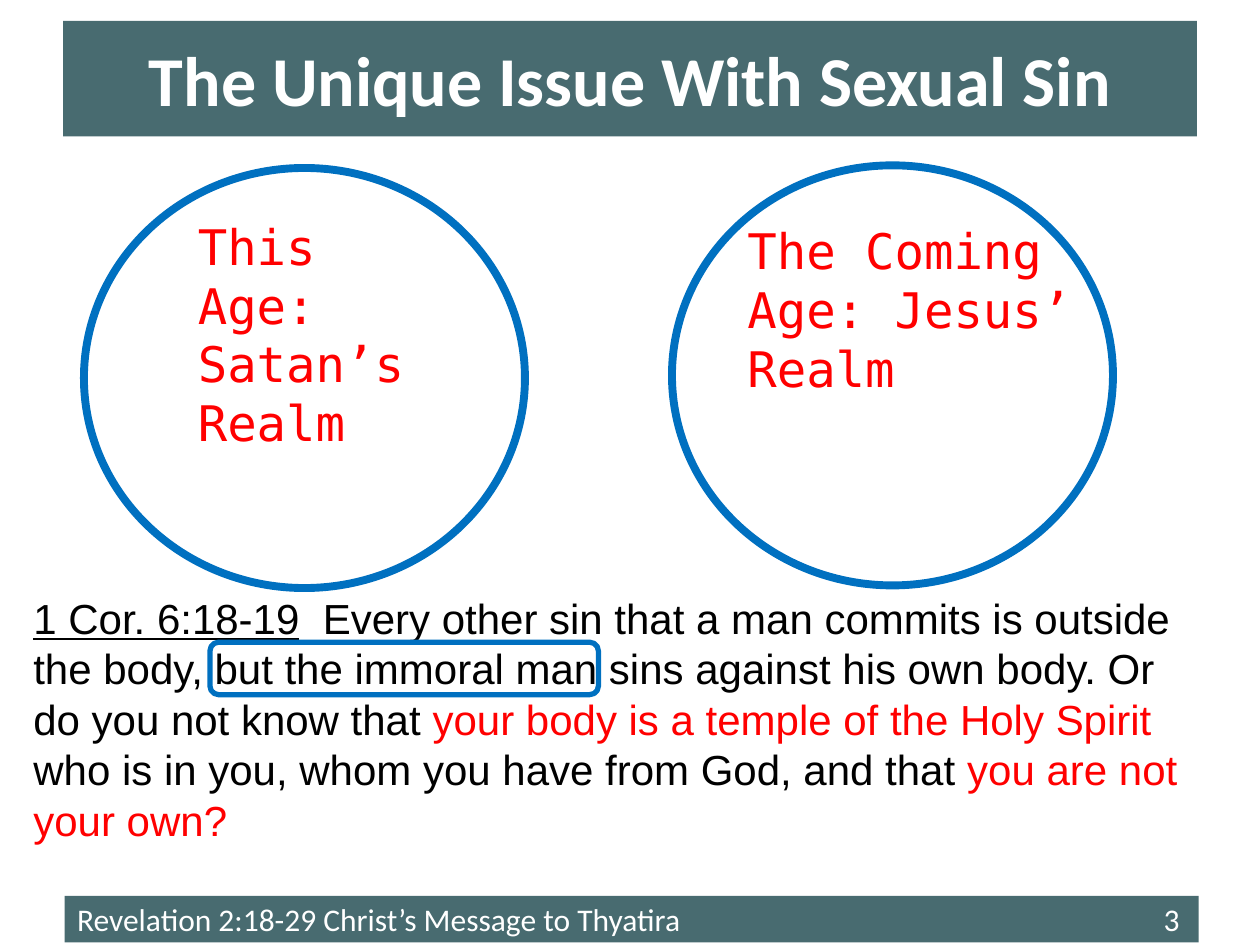
from lxml.etree import SubElement
from pptx import Presentation
from pptx.dml.color import RGBColor
from pptx.enum.shapes import MSO_SHAPE as Shape
from pptx.enum.text import MSO_ANCHOR as Anchor, PP_ALIGN as Align
from pptx.oxml.ns import qn
from pptx.util import Pt

COLORS = {
    "band": "486B70",
    "outline": "0070C0",
    "accent": "FF0000",
    "text": "000000",
    "light": "FFFFFF",
}


def color(name):
    return RGBColor.from_string(COLORS[name])


def points(*lengths):
    return [Pt(length) for length in lengths]


def format_font(font, name, size, color_name, bold=False):
    font.name = name
    font.size = Pt(size)
    font.bold = bold
    font.color.rgb = color(color_name)


def fill_band(shape):
    shape.fill.solid()
    shape.fill.fore_color.rgb = color("band")


def add_title(slide, text):
    title = slide.shapes.title
    title.left, title.top, title.width, title.height = points(36, 12, 648, 66)
    fill_band(title)
    frame = title.text_frame
    frame.text = text
    frame.vertical_anchor = Anchor.MIDDLE
    paragraph = frame.paragraphs[0]
    paragraph.alignment = Align.CENTER
    format_font(paragraph.font, "Calibri", 40, "light", bold=True)


def add_footer(slide, text, number):
    """Add the bottom band, with the slide number at a right tab stop."""
    band = slide.shapes.add_shape(Shape.RECTANGLE, *points(37, 512, 648, 26.5))
    band.shadow.inherit = False
    fill_band(band)
    band.line.fill.background()
    frame = band.text_frame
    frame.text = f"{text}\t {number}"
    frame.vertical_anchor = Anchor.MIDDLE
    paragraph = frame.paragraphs[0]
    paragraph.alignment = Align.LEFT
    format_font(paragraph.font, "Calibri", 18, "light")
    properties = paragraph._p.get_or_add_pPr()
    tabs = SubElement(properties, qn("a:tabLst"))
    SubElement(tabs, qn("a:tab"), pos=str(Pt(630)), algn="r")
    properties.insert(0, tabs)


def add_outline(slide, preset, left, top, width, height, weight):
    shape = slide.shapes.add_shape(preset, *points(left, top, width, height))
    shape.shadow.inherit = False
    shape.fill.background()
    shape.line.color.rgb = color("outline")
    shape.line.width = Pt(weight)


def add_text_box(slide, left, top, width, height):
    """Add a wrapping text box and return its first paragraph."""
    box = slide.shapes.add_textbox(*points(left, top, width, height))
    box.text_frame.word_wrap = True
    return box.text_frame.paragraphs[0]


def add_realm_label(slide, text, left, top, width):
    paragraph = add_text_box(slide, left, top, width, 109)
    paragraph.text = text
    format_font(paragraph.font, "DejaVu Sans Mono", 28, "accent")


def add_verse(slide, reference, passages):
    paragraph = add_text_box(slide, 12, 335, 684, 152.5)
    format_font(paragraph.font, "Arial", 24, "text")
    run = paragraph.add_run()
    run.text = reference
    run.font.underline = True
    for text, color_name in passages:
        run = paragraph.add_run()
        run.text = text
        run.font.color.rgb = color(color_name)


def main():
    presentation = Presentation()
    presentation.slide_width, presentation.slide_height = points(720, 540)
    slide = presentation.slides.add_slide(presentation.slide_layouts[5])

    add_footer(slide, "Revelation 2:18-29 Christ’s Message to Thyatira", 3)
    add_title(slide, "The Unique Issue With Sexual Sin")
    for left, top in ((48, 96), (384, 94.5)):
        add_outline(slide, Shape.OVAL, left, top, 252, 240, 4.5)
    add_realm_label(slide, "This Age: Satan’s Realm", 106, 120, 162)
    add_realm_label(slide, "The Coming Age: Jesus’ Realm", 420, 122.5, 237)
    add_verse(slide, "1 Cor. 6:18-19", [
        ("  Every other sin that a man commits is outside the body, "
         "but the immoral man sins against his own body. "
         "Or do you not know that ", "text"),
        ("your body is a temple of the Holy Spirit ", "accent"),
        ("who is in you, whom you have from God, and that ", "text"),
        ("you are not your own?", "accent"),
    ])
    add_outline(slide, Shape.ROUNDED_RECTANGLE, 120, 367, 222, 30, 3)

    presentation.save("out.pptx")


if __name__ == "__main__":
    main()
